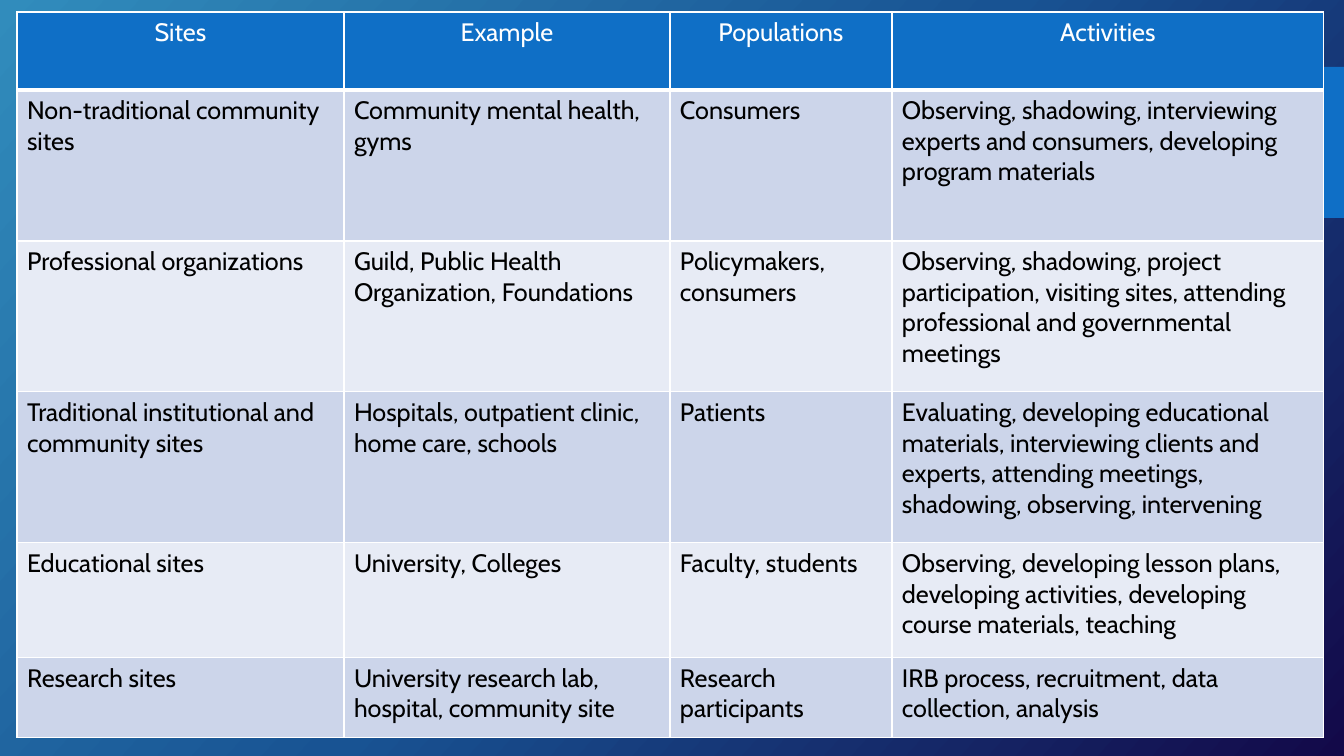
"""Build a slide with a table of fieldwork sites, populations and activities."""
from pptx import Presentation
from pptx.dml.color import RGBColor
from pptx.enum.shapes import MSO_SHAPE
from pptx.enum.text import PP_ALIGN
from pptx.oxml import parse_xml
from pptx.oxml.ns import nsdecls
from pptx.util import Emu, Pt

HEADER = ("Sites", "Example", "Populations", "Activities")
SITES = [
    ("Non-traditional community sites", "Community mental health, gyms", "Consumers",
     "Observing, shadowing, interviewing experts and consumers, developing program materials"),
    ("Professional organizations", "Guild, Public Health Organization, Foundations",
     "Policymakers, consumers",
     "Observing, shadowing, project participation, visiting sites, attending "
     "professional and governmental meetings"),
    ("Traditional institutional and community sites",
     "Hospitals, outpatient clinic, home care, schools", "Patients",
     "Evaluating, developing educational materials, interviewing clients and experts, "
     "attending meetings, shadowing, observing, intervening"),
    ("Educational sites", "University, Colleges", "Faculty, students",
     "Observing, developing lesson plans, developing activities, developing course "
     "materials, teaching"),
    ("Research sites", "University research lab, hospital, community site",
     "Research participants", "IRB process, recruitment, data collection, analysis"),
]
COLORS = {"accent": "0F6FC6", "odd": "CCD5EA", "even": "E7EBF5",
          "white": "FFFFFF", "black": "000000"}
GRADIENT = [(0, "318CBC"), (50, "185393"), (100, "130949")]
GRADIENT_ANGLE = 42
FONT, FONT_SIZE = "Cabin", 18
SLIDE_SIZE = (1344, 756)
TAB_BOX = (1167, 67, 177, 151)
TABLE_ORIGIN = (17, 12)
COLUMN_WIDTHS = (327, 326, 222, 432)
ROW_HEIGHTS = (78, 151, 151, 151, 115, 80)
THIN, THICK = 1, 3
SCALE = 12192000 / 1344


def px(length):
    return Emu(round(length * SCALE))


def color(name):
    return RGBColor.from_string(COLORS[name])


def paint_background(slide):
    stops = "".join(f'<a:gs pos="{position * 1000}"><a:srgbClr val="{value}"/></a:gs>'
                    for position, value in GRADIENT)
    slide.element.cSld.insert(0, parse_xml(
        f'<p:bg {nsdecls("p", "a")}><p:bgPr><a:gradFill rotWithShape="1">'
        f'<a:gsLst>{stops}</a:gsLst><a:lin ang="{GRADIENT_ANGLE * 60000}" scaled="0"/>'
        f'</a:gradFill><a:effectLst/></p:bgPr></p:bg>'))


def set_borders(cell, top, bottom):
    properties = cell._tc.get_or_add_tcPr()
    sides = (("L", THIN), ("R", THIN), ("T", top), ("B", bottom))
    for index, (side, width) in enumerate(sides):
        properties.insert(index, parse_xml(
            f'<a:ln{side} {nsdecls("a")} w="{Pt(width)}"><a:solidFill>'
            f'<a:srgbClr val="{COLORS["white"]}"/></a:solidFill></a:ln{side}>'))


def fill_cell(cell, text, row):
    is_header = row == 0
    cell.fill.solid()
    cell.fill.fore_color.rgb = color("accent" if is_header else "odd" if row % 2 else "even")
    set_borders(cell, THICK if row == 1 else THIN, THICK if is_header else THIN)
    paragraph = cell.text_frame.paragraphs[0]
    paragraph.alignment = PP_ALIGN.CENTER if is_header else PP_ALIGN.LEFT
    run = paragraph.add_run()
    run.text = text
    run.font.name = FONT
    run.font.size = Pt(FONT_SIZE)
    run.font.bold = False
    run.font.color.rgb = color("white" if is_header else "black")


def add_side_tab(slide):
    shape = slide.shapes.add_shape(MSO_SHAPE.RECTANGLE, *map(px, TAB_BOX))
    shape.shadow.inherit = False
    shape.fill.solid()
    shape.fill.fore_color.rgb = color("accent")
    shape.line.fill.background()


def add_sites_table(slide):
    rows = [HEADER, *SITES]
    size = (sum(COLUMN_WIDTHS), sum(ROW_HEIGHTS))
    table = slide.shapes.add_table(
        len(rows), len(HEADER), *map(px, TABLE_ORIGIN + size)).table
    for column, width in zip(table.columns, COLUMN_WIDTHS):
        column.width = px(width)
    for row, height in zip(table.rows, ROW_HEIGHTS):
        row.height = px(height)
    for row_index, texts in enumerate(rows):
        for column_index, text in enumerate(texts):
            fill_cell(table.cell(row_index, column_index), text, row_index)


def main():
    presentation = Presentation()
    presentation.slide_width, presentation.slide_height = map(px, SLIDE_SIZE)
    slide = presentation.slides.add_slide(presentation.slide_layouts[6])
    paint_background(slide)
    add_side_tab(slide)
    add_sites_table(slide)
    presentation.save("out.pptx")


if __name__ == "__main__":
    main()
